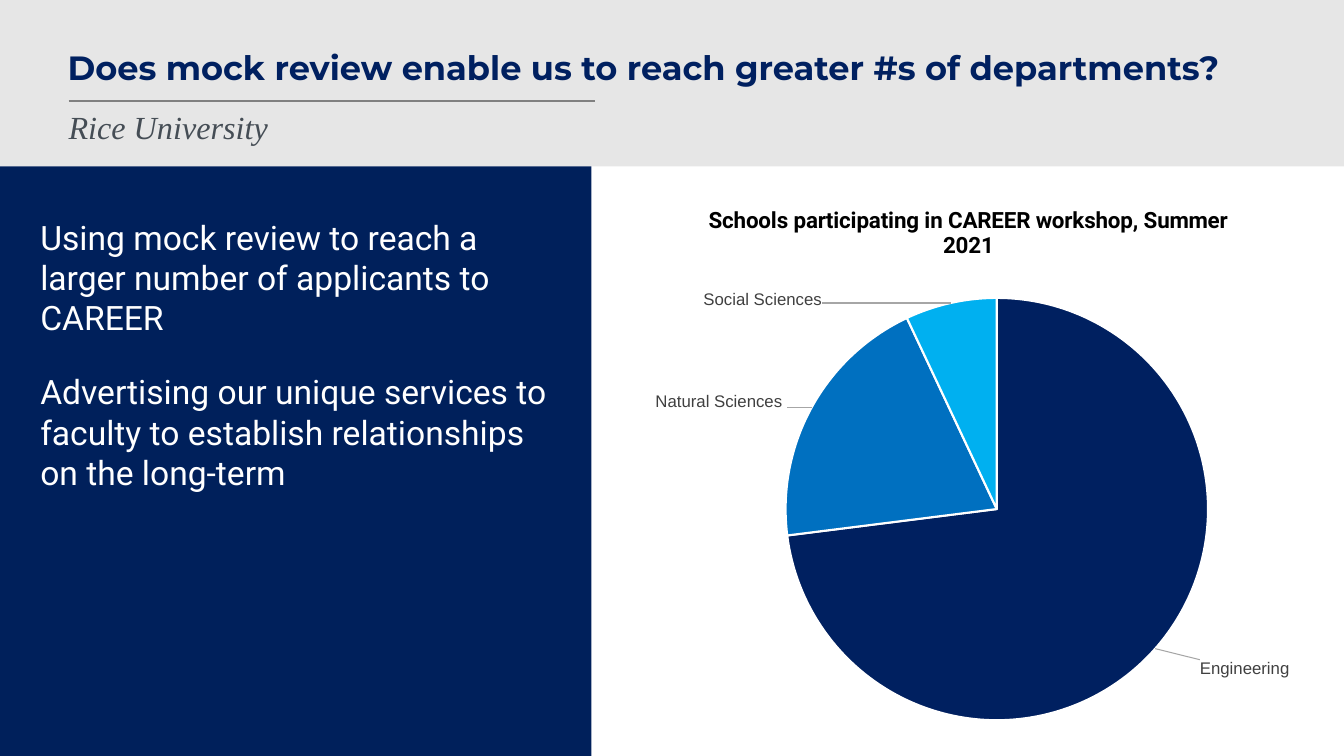
from lxml.etree import SubElement
from pptx import Presentation
from pptx.chart.data import CategoryChartData
from pptx.dml.color import RGBColor
from pptx.enum.chart import XL_CHART_TYPE, XL_LABEL_POSITION
from pptx.enum.shapes import MSO_CONNECTOR, MSO_SHAPE
from pptx.enum.text import MSO_ANCHOR, MSO_AUTO_SIZE, PP_ALIGN
from pptx.oxml import parse_xml
from pptx.oxml.ns import nsdecls, qn
from pptx.util import Inches, Pt

TITLE = "Does mock review enable us to reach greater #s of departments?"
SUBTITLE = "Rice University"
PANEL = [
    "Using mock review to reach a larger number of applicants to CAREER",
    "Advertising our unique services to faculty to establish relationships on the long-term",
]
CHART_TITLE = "Schools participating in CAREER workshop, Summer 2021"
SCHOOLS = [
    ("Engineering", 73, "002060", (0.058, 0.013)),
    ("Natural Sciences ", 20, "0070C0", (-0.028, 0.012)),
    ("Social Sciences", 7, "00B0F0", (-0.184, 0.02)),
]
PIE = {"x": 0.236, "y": 0.204, "w": 0.61, "h": 0.766}

WIDTH, HEIGHT = 13.33, 7.5
BAND = 0.22 * HEIGHT
SPLIT = 0.44 * WIDTH


def color(value):
    return RGBColor.from_string(value)


def style(font, name, size, tint, bold=False, italic=False):
    font.name, font.size = name, Pt(size)
    font.bold, font.italic = bold, italic
    font.color.rgb = color(tint)


def place(shape, left, top, width, height):
    shape.left, shape.top = Inches(left), Inches(top)
    shape.width, shape.height = Inches(width), Inches(height)


def write(shape, lines, anchor=MSO_ANCHOR.TOP, spacing=1.0, gap=0, **look):
    frame = shape.text_frame
    frame.word_wrap = True
    frame.auto_size = MSO_AUTO_SIZE.NONE
    frame.vertical_anchor = anchor
    for index, line in enumerate(lines):
        para = frame.paragraphs[0] if index == 0 else frame.add_paragraph()
        para.alignment = PP_ALIGN.LEFT
        para.line_spacing = spacing
        para.space_before = Pt(gap if index else 0)
        properties = para._p.get_or_add_pPr()
        properties.set("marL", "0")
        properties.set("indent", "0")
        SubElement(properties, qn("a:buNone"))
        span = para.add_run()
        span.text = line
        style(span.font, **look)


def rectangle(page, left, top, width, height, fill):
    box = page.shapes.add_shape(
        MSO_SHAPE.RECTANGLE, Inches(left), Inches(top), Inches(width), Inches(height))
    box.shadow.inherit = False
    box.fill.solid()
    box.fill.fore_color.rgb = color(fill)
    box.line.fill.background()
    return box


def manual_layout(parts, inner=False):
    target = '<c:layoutTarget val="inner"/>' if inner else ""
    modes = '<c:xMode val="edge"/><c:yMode val="edge"/>' if inner else ""
    values = "".join(f'<c:{key} val="{value}"/>' for key, value in parts.items())
    return parse_xml(f'<c:layout {nsdecls("c")}><c:manualLayout>{target}{modes}{values}'
                     "</c:manualLayout></c:layout>")


def add_header(page):
    band = rectangle(page, 0, 0, WIDTH, BAND, "E6E6E6")
    rule = page.shapes.add_connector(
        MSO_CONNECTOR.STRAIGHT, Inches(0.68), Inches(1), Inches(5.9), Inches(1))
    rule.line.color.rgb = color("808080")
    rule.line.width = Pt(1.5)
    SubElement(rule._element.spPr, qn("a:effectLst"))
    for position, shape in enumerate((band, rule), start=2):
        page.shapes._spTree.insert(position, shape._element)
    title, subtitle = page.placeholders[0], page.placeholders[1]
    place(title, 0.57, 0.3, 12.54, 0.79)
    write(title, [TITLE], MSO_ANCHOR.MIDDLE, 0.9,
          name="Montserrat", size=24, tint="002060", bold=True)
    place(subtitle, 0.58, 1.06, 11.71, 0.45)
    write(subtitle, [SUBTITLE], spacing=0.9,
          name="Times New Roman", size=23, tint="454D55", italic=True)


def add_panel(page):
    panel = rectangle(page, 0, BAND, SPLIT, HEIGHT - BAND, "00205B")
    frame = panel.text_frame
    frame.margin_left = frame.margin_right = Inches(0.4)
    frame.margin_top = Inches(0.5)
    write(panel, PANEL, gap=24, name="Roboto", size=24, tint="FFFFFF")


def add_pie(page):
    data = CategoryChartData()
    data.categories = [school[0] for school in SCHOOLS]
    data.add_series("Series 1", [school[1] for school in SCHOOLS])
    chart = page.shapes.add_chart(
        XL_CHART_TYPE.PIE, Inches(6.17), Inches(1.84), Inches(6.87), Inches(5.47), data).chart
    style(chart.font, "Arial", 10, "000000")
    chart.has_legend = False
    chart.has_title = True
    heading = chart.chart_title.text_frame
    heading.text = CHART_TITLE
    style(heading.paragraphs[0].runs[0].font, "Roboto", 16, "000000", bold=True)

    plot = chart.plots[0]
    plot.vary_by_categories = True
    area = chart._chartSpace.chart.plotArea
    for old in area.findall(qn("c:layout")):
        area.remove(old)
    area.insert(0, manual_layout(PIE, inner=True))

    series = plot.series[0]
    labels = series.data_labels
    labels.show_category_name, labels.show_value = True, False
    labels.position = XL_LABEL_POSITION.OUTSIDE_END
    style(labels.font, "Arial", 12, "404040")
    for index, (name, value, fill, shift) in enumerate(SCHOOLS):
        point = series.points[index]
        point.format.fill.solid()
        point.format.fill.fore_color.rgb = color(fill)
        point.format.line.color.rgb = color("FFFFFF")
        point.format.line.width = Pt(1.5)
        label = point.data_label
        style(label.font, "Arial", 12, "404040")
        label.position = XL_LABEL_POSITION.OUTSIDE_END
        element = labels._element.findall(qn("c:dLbl"))[index]
        element.find(qn("c:showVal")).set("val", "0")
        element.find(qn("c:showCatName")).set("val", "1")
        element.insert(1, manual_layout(dict(zip("xy", shift))))
    for old in labels._element.findall(qn("c:showLeaderLines")):
        labels._element.remove(old)
    SubElement(labels._element, qn("c:showLeaderLines")).set("val", "1")
    labels._element.append(parse_xml(
        f'<c:leaderLines {nsdecls("c", "a")}><c:spPr><a:ln w="9525"><a:solidFill>'
        '<a:srgbClr val="A6A6A6"/></a:solidFill></a:ln></c:spPr></c:leaderLines>'))


def main():
    deck = Presentation()
    deck.slide_width, deck.slide_height = Inches(WIDTH), Inches(HEIGHT)
    page = deck.slides.add_slide(deck.slide_layouts[1])
    add_header(page)
    add_panel(page)
    add_pie(page)
    deck.save("out.pptx")


if __name__ == "__main__":
    main()
